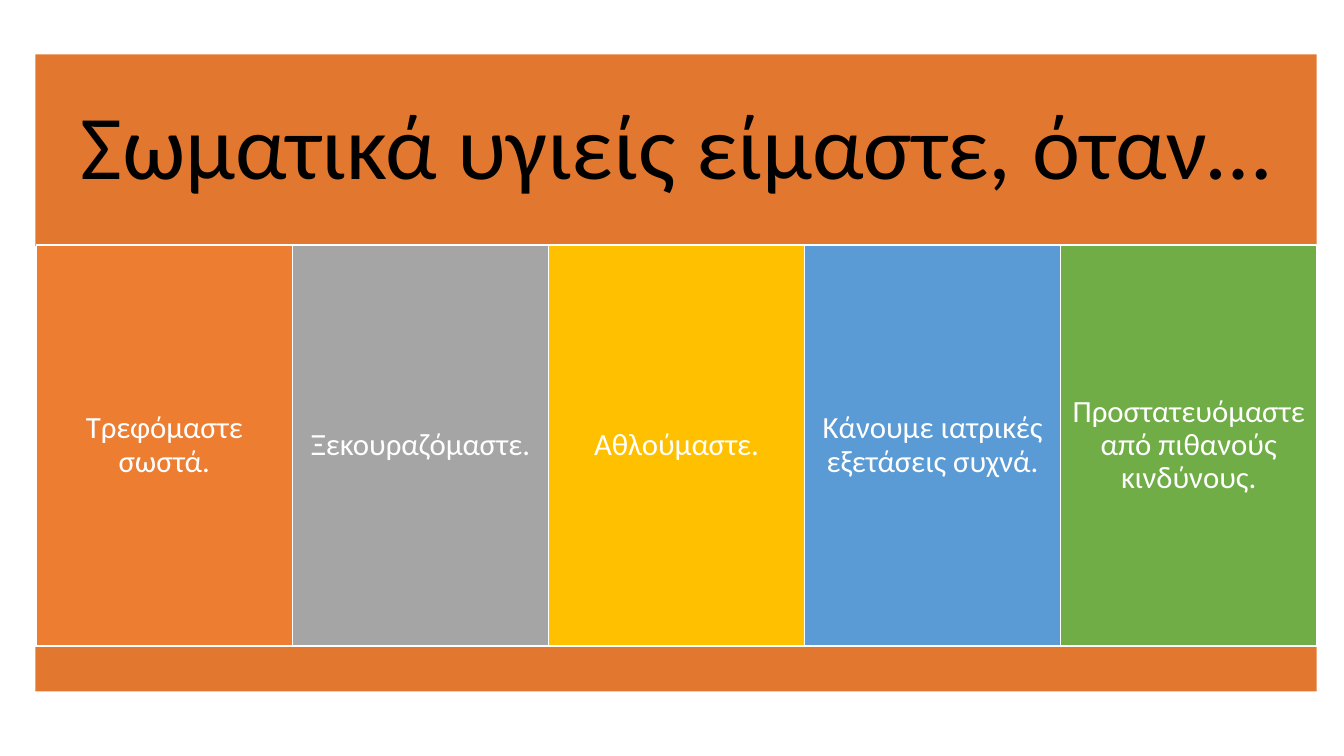
"""Build a slide with a title band, five coloured habit columns and a footer band."""
from pptx import Presentation
from pptx.dml.color import RGBColor
from pptx.enum.shapes import MSO_SHAPE
from pptx.enum.text import MSO_ANCHOR, PP_ALIGN
from pptx.util import Inches, Pt

RECTANGLE = MSO_SHAPE.RECTANGLE
MIDDLE = MSO_ANCHOR.MIDDLE
CENTER = PP_ALIGN.CENTER
BLACK = RGBColor(0x00, 0x00, 0x00)
WHITE = RGBColor(0xFF, 0xFF, 0xFF)
BAND = RGBColor(0xE2, 0x77, 0x2F)
ORANGE = RGBColor(0xED, 0x7D, 0x31)
GRAY = RGBColor(0xA5, 0xA5, 0xA5)
GOLD = RGBColor(0xFF, 0xC0, 0x00)
BLUE = RGBColor(0x5B, 0x9B, 0xD5)
GREEN = RGBColor(0x70, 0xAD, 0x47)

LEFT, TOP, WIDTH = 0.35, 0.54, 12.71
TITLE_HEIGHT, COLUMN_HEIGHT, FOOTER_HEIGHT = 1.9, 3.98, 0.44
COLUMN_LEFT, COLUMN_TOP, COLUMN_WIDTH = 0.36, 2.43, 2.54
FOOTER_TOP = 6.42

HABITS = [
    ("Τρεφόμαστε σωστά.", ORANGE),
    ("Ξεκουραζόμαστε.", GRAY),
    ("Αθλούμαστε.", GOLD),
    ("Κάνουμε ιατρικές εξετάσεις συχνά.", BLUE),
    ("Προστατευόμαστε από πιθανούς κινδύνους.", GREEN),
]

deck = Presentation()
deck.slide_width, deck.slide_height = Inches(13.33), Inches(7.5)
page = deck.slides.add_slide(deck.slide_layouts[6])


def add_block(left, top, width, height, fill):
    """Add a plain filled rectangle without outline or shadow."""
    box = page.shapes.add_shape(
        RECTANGLE, Inches(left), Inches(top), Inches(width), Inches(height))
    box.shadow.inherit = False
    box.fill.solid()
    box.fill.fore_color.rgb = fill
    box.line.fill.background()
    return box


def write_text(box, text, size, color, inset):
    """Write one centred paragraph inside a block."""
    frame = box.text_frame
    margins = ("margin_left", "margin_top", "margin_right", "margin_bottom")
    frame_format = dict.fromkeys(margins, Inches(inset))
    frame_format.update(word_wrap=True, vertical_anchor=MIDDLE)
    para = frame.paragraphs[0]
    span = para.add_run()
    span.text = text
    span.font.color.rgb = color
    for target, values in (
        (frame, frame_format),
        (para, {"alignment": CENTER, "line_spacing": 0.9}),
        (span.font, {"name": "Calibri", "size": Pt(size)}),
    ):
        for name, value in values.items():
            setattr(target, name, value)


title = add_block(LEFT, TOP, WIDTH, TITLE_HEIGHT, BAND)
write_text(title, "Σωματικά υγιείς είμαστε, όταν…", 65, BLACK, 0.27)

for index, (habit, color) in enumerate(HABITS):
    column = add_block(COLUMN_LEFT + index * COLUMN_WIDTH, COLUMN_TOP,
                       COLUMN_WIDTH, COLUMN_HEIGHT, color)
    column.line.color.rgb = WHITE
    column.line.width = Pt(1)
    write_text(column, habit, 22, WHITE, 0.09)

add_block(LEFT, FOOTER_TOP, WIDTH, FOOTER_HEIGHT, BAND)

deck.save("out.pptx")
